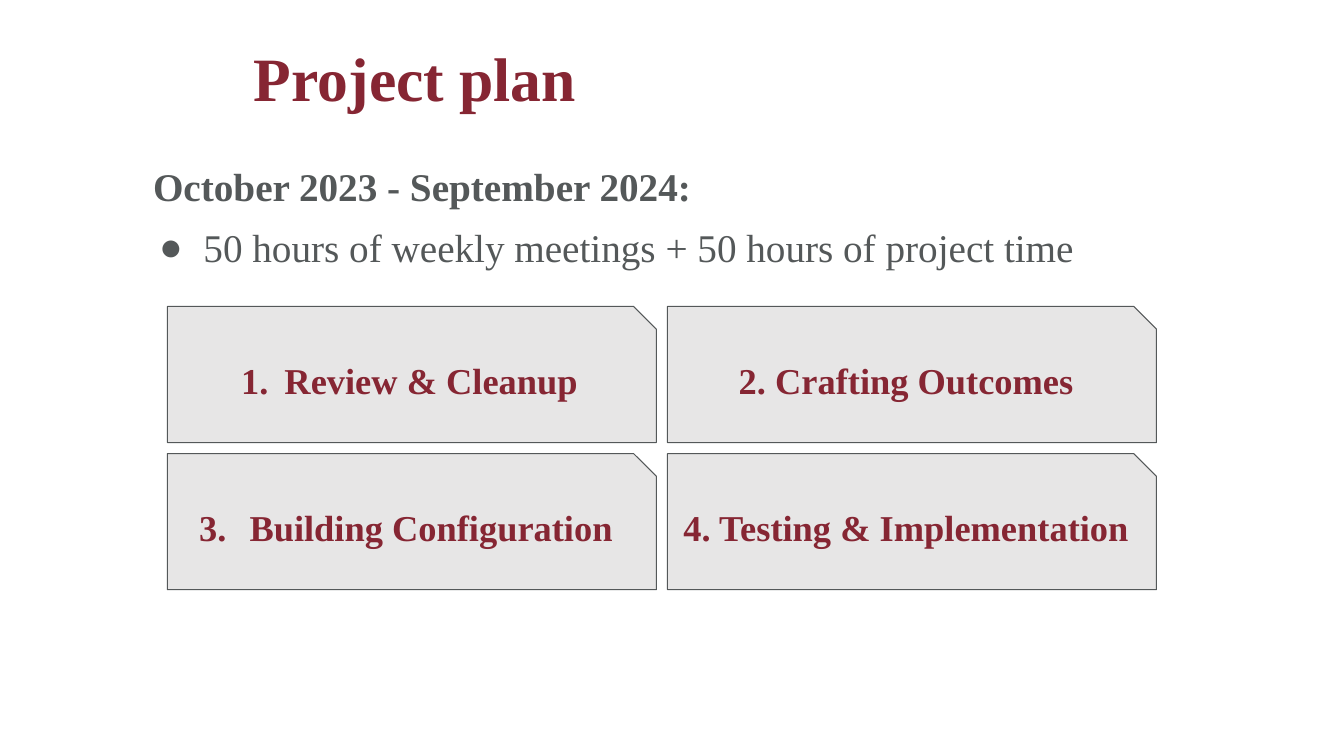
from lxml import etree
from pptx import Presentation
from pptx.dml.color import RGBColor
from pptx.enum.shapes import MSO_SHAPE
from pptx.enum.text import MSO_ANCHOR, PP_ALIGN
from pptx.oxml.ns import qn
from pptx.util import Inches, Pt

SNIPPED = MSO_SHAPE.SNIP_1_RECTANGLE
MIDDLE, TOP = MSO_ANCHOR.MIDDLE, MSO_ANCHOR.TOP
CENTER, LEFT = PP_ALIGN.CENTER, PP_ALIGN.LEFT

FONT = "Times New Roman"
MAROON, GRAY, LIGHT = "862633", "545859", "E7E6E6"

PHASES = [
    "Review & Cleanup",
    "2. Crafting Outcomes",
    "3. \tBuilding Configuration",
    "4. Testing & Implementation",
]


def color(value):
    return RGBColor.from_string(value)


def set_attributes(target, values):
    for name, value in values.items():
        setattr(target, name, value)


def set_frame(shape, anchor, vertical_inset):
    """Set wrapping, anchor and insets of a shape's text."""
    frame = shape.text_frame
    set_attributes(frame, {
        "word_wrap": True,
        "vertical_anchor": anchor,
        "margin_left": Inches(0.1),
        "margin_right": Inches(0.1),
        "margin_top": Inches(vertical_inset),
        "margin_bottom": Inches(vertical_inset),
    })
    return frame


def add_text_box(slide, left, top, width, height, anchor, vertical_inset):
    box = slide.shapes.add_textbox(
        Inches(left), Inches(top), Inches(width), Inches(height))
    return set_frame(box, anchor, vertical_inset)


def write(paragraph, text, size, text_color, bold=True, **layout):
    set_attributes(paragraph, layout)
    run = paragraph.add_run()
    run.text = text
    set_attributes(run.font, {"name": FONT, "size": Pt(size), "bold": bold})
    run.font.color.rgb = color(text_color)


def add_bullet(paragraph, bullet_color, hanging, tag, **attributes):
    """Give a paragraph a hanging indent and a colored bullet or number."""
    properties = paragraph._p.get_or_add_pPr()
    properties.set("marL", str(Inches(0.5)))
    properties.set("indent", str(-Inches(hanging)))
    fill = etree.SubElement(properties, qn("a:buClr"))
    etree.SubElement(fill, qn("a:srgbClr"), val=bullet_color)
    etree.SubElement(properties, qn("a:buFont"), typeface=FONT)
    etree.SubElement(properties, qn(tag), **attributes)


def add_phase(slide, left, top):
    """Add one card with a snipped corner and return its paragraph."""
    card = slide.shapes.add_shape(
        SNIPPED, Inches(left), Inches(top), Inches(4.85), Inches(1.35))
    card.adjustments[0] = 0.167
    card.shadow.inherit = False
    card.fill.solid()
    card.fill.fore_color.rgb = color(LIGHT)
    card.line.color.rgb = color(GRAY)
    card.line.width = Pt(0.75)
    return set_frame(card, MIDDLE, 0.1).paragraphs[0]


def main():
    presentation = Presentation()
    presentation.slide_width = Inches(13.33)
    presentation.slide_height = Inches(7.5)
    slide = presentation.slides.add_slide(presentation.slide_layouts[6])

    # Title
    title = add_text_box(slide, 2.42, 0.44, 9.35, 0.73, MIDDLE, 0.05)
    write(title.paragraphs[0], "Project plan", 44, MAROON,
          alignment=LEFT, line_spacing=0.9)

    # Phase cards in a two by two grid
    for index, phase in enumerate(PHASES):
        row, column = divmod(index, 2)
        paragraph = add_phase(slide, 1.66 + 4.96 * column, 3.04 + 1.46 * row)
        if index == 0:
            add_bullet(paragraph, MAROON, 0.43, "a:buAutoNum",
                       type="arabicPeriod")
        write(paragraph, phase, 26, MAROON, alignment=CENTER)

    # Period and hours
    schedule = add_text_box(slide, 1.42, 1.51, 10.5, 1.28, TOP, 0.1)
    write(schedule.paragraphs[0], "October 2023 - September 2024:", 28, GRAY,
          alignment=LEFT)
    hours = schedule.add_paragraph()
    add_bullet(hours, GRAY, 0.44, "a:buChar", char="●")
    write(hours, "50 hours of weekly meetings + 50 hours of project time",
          28, GRAY, bold=False, alignment=LEFT,
          space_before=Pt(10), space_after=Pt(10))

    presentation.save("out.pptx")


if __name__ == "__main__":
    main()
